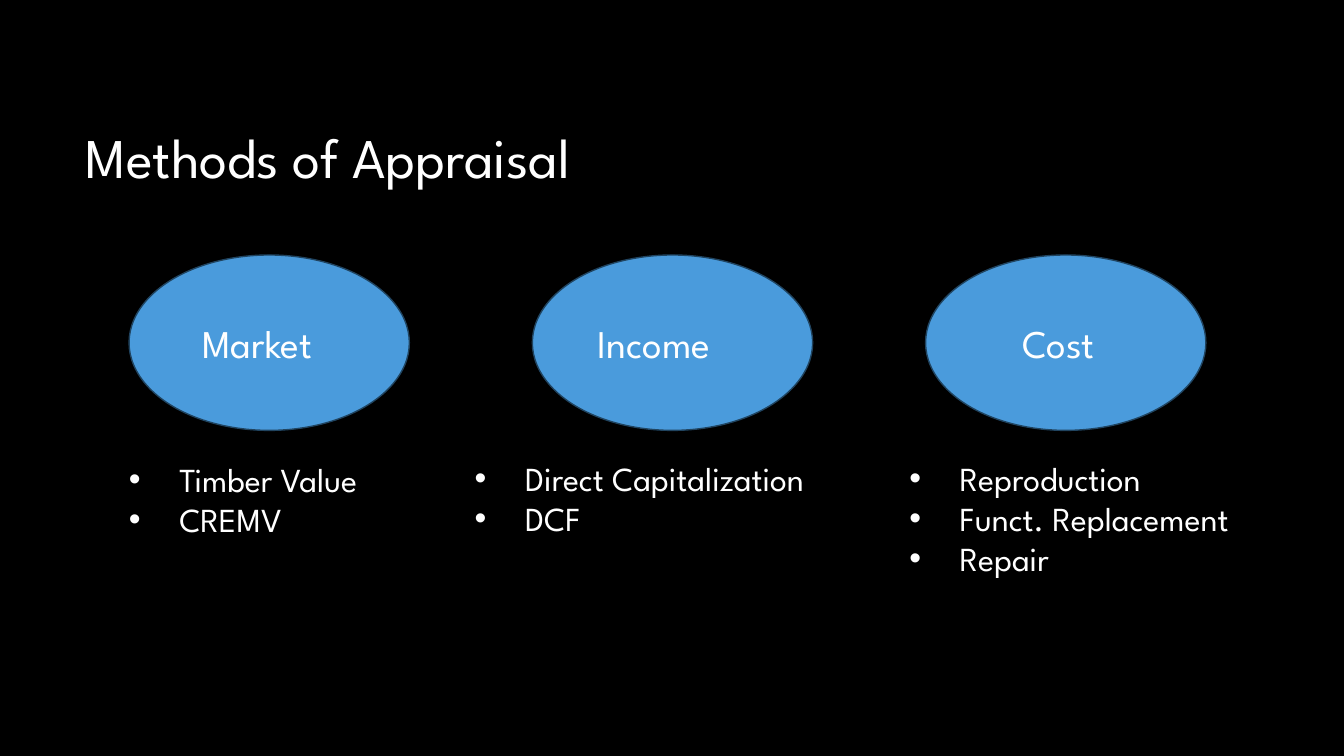
from lxml.etree import SubElement
from pptx import Presentation
from pptx.dml.color import RGBColor
from pptx.enum.shapes import MSO_SHAPE
from pptx.enum.text import MSO_ANCHOR
from pptx.oxml.ns import qn
from pptx.util import Inches, Pt


def rgb(value):
    return RGBColor.from_string(value)


class Deck:
    font = "League Spartan"
    text_color = "FFFFFF"
    oval_fill = "4A9BDC"
    oval_line = "204460"

    def __init__(self, prs, background):
        self.s = prs.slides.add_slide(prs.slide_layouts[6])
        fill = self.s.background.fill
        fill.solid()
        fill.fore_color.rgb = rgb(background)

    def oval(self, x, y, w, h):
        sp = self.s.shapes.add_shape(
            MSO_SHAPE.OVAL, Inches(x), Inches(y), Inches(w), Inches(h))
        sp.shadow.inherit = False
        sp.fill.solid()
        sp.fill.fore_color.rgb = rgb(self.oval_fill)
        sp.line.color.rgb = rgb(self.oval_line)
        sp.line.width = Pt(1)

    def text(self, lines, x, y, w, h, size, bullets=False):
        sp = self.s.shapes.add_textbox(Inches(x), Inches(y), Inches(w), Inches(h))
        tf = sp.text_frame
        tf.word_wrap = True
        tf.text = "\n".join(lines)
        for p in tf.paragraphs:
            if bullets:
                self.bullet(p)
            for r in p.runs:
                r.font.name = self.font
                r.font.size = Pt(size)
                r.font.color.rgb = rgb(self.text_color)
        return tf

    def bullet(self, p):
        pPr = p._p.get_or_add_pPr()
        pPr.set("marL", str(Inches(0.5)))
        pPr.set("indent", str(-Inches(0.5)))
        SubElement(pPr, qn("a:buFont")).set("typeface", "Arial")
        SubElement(pPr, qn("a:buChar")).set("char", "•")

    def title(self, text, x, y, w, h):
        tf = self.text([text], x, y, w, h, 40)
        tf.vertical_anchor = MSO_ANCHOR.MIDDLE
        tf.paragraphs[0].line_spacing = 0.9


def main():
    prs = Presentation()
    prs.slide_width, prs.slide_height = Inches(13.33), Inches(7.5)
    deck = Deck(prs, "000000")
    deck.title("Methods of Appraisal", 0.75, 0.89, 9.42, 1.41)

    methods = [
        ("Market", 1.28, 1.91, 1.53, ["Timber Value", "CREMV"], 1.18, 4.5, 2.89),
        ("Income", 5.28, 5.83, 1.67, ["Direct Capitalization", "DCF"], 4.61, 4.49, 4.11),
        ("Cost", 9.18, 10.04, 1.06,
         ["Reproduction", "Funct. Replacement", "Repair"], 8.92, 4.49, 4.11),
    ]
    for name, oval_x, name_x, name_w, items, list_x, list_y, list_w in methods:
        deck.oval(oval_x, 2.53, 2.78, 1.74)
        deck.text([name], name_x, 3.12, name_w, 0.57, 28)
        deck.text(items, list_x, list_y, list_w, 0.11 + 0.4 * len(items), 24, bullets=True)

    prs.save("out.pptx")


if __name__ == "__main__":
    main()
